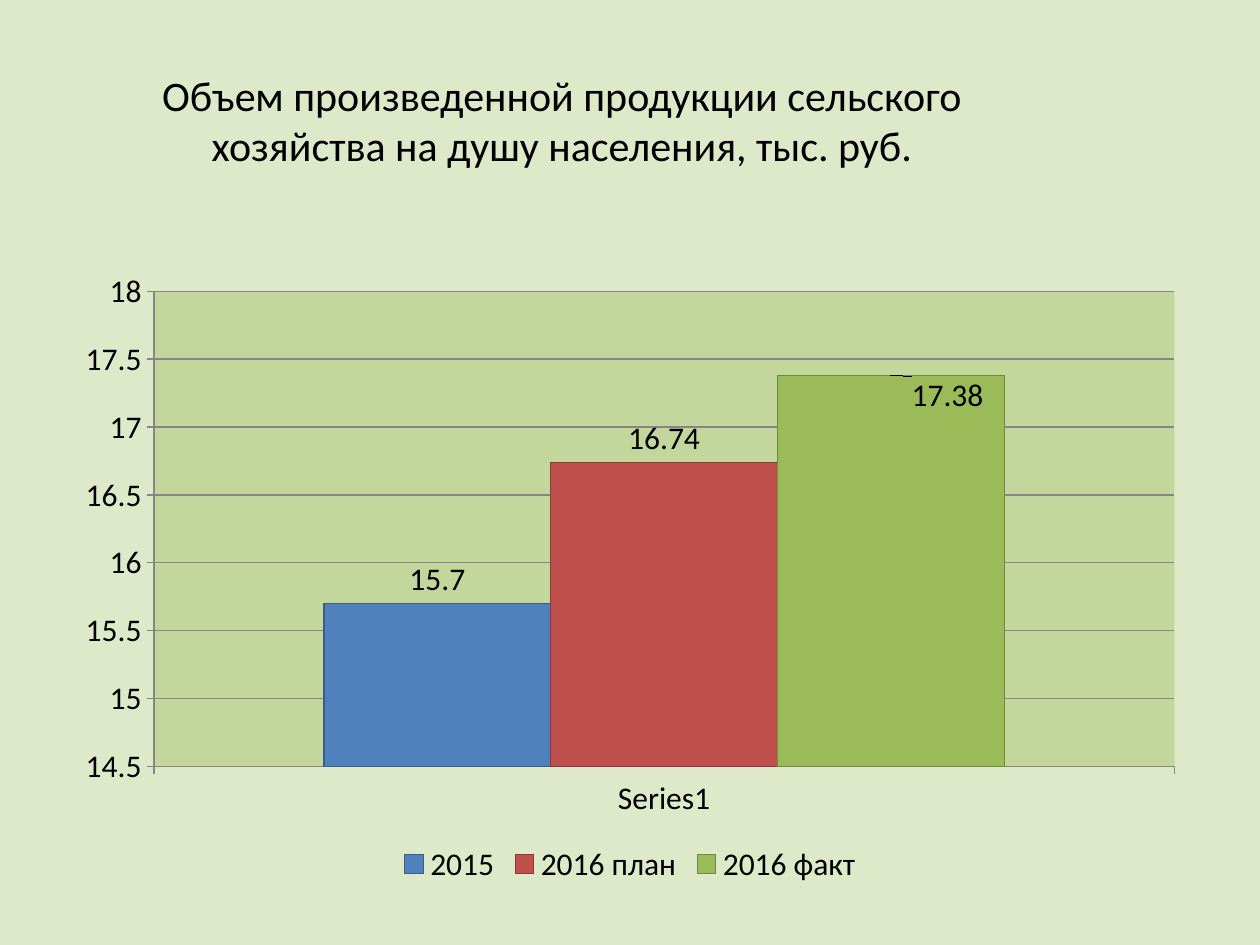
from lxml import etree
from pptx import Presentation
from pptx.chart.data import CategoryChartData as ChartData
from pptx.dml.color import RGBColor as RGB
from pptx.enum.chart import (XL_CHART_TYPE as Kind, XL_LABEL_POSITION as Spot,
                             XL_LEGEND_POSITION as Side, XL_TICK_MARK as Tick)
from pptx.enum.text import MSO_ANCHOR as Anchor, PP_ALIGN as Align
from pptx.oxml import parse_xml
from pptx.oxml.ns import nsdecls, qn
from pptx.util import Inches, Pt

# Content
TITLE = "Объем произведенной продукции сельского хозяйства на душу населения, тыс. руб."
GROUP = "Series1"
BLACK = RGB(0, 0, 0)
GREY = RGB(0x86, 0x86, 0x86)
PAGE = RGB(0xDE, 0xE9, 0xC9)
PLOT = RGB(0xC3, 0xD6, 0x9B)
BARS = [  # name, value, fill, edge
    ("2015", 15.7, RGB(0x4F, 0x81, 0xBD), RGB(0x38, 0x5D, 0x8A)),
    ("2016 план", 16.74, RGB(0xC0, 0x50, 0x4D), RGB(0x8C, 0x38, 0x36)),
    ("2016 факт", 17.38, RGB(0x9B, 0xBB, 0x59), RGB(0x71, 0x89, 0x3F)),
]
SCALE = {"minimum_scale": 14.5, "maximum_scale": 18, "major_unit": 0.5}
FONT = {"name": "Calibri", "size": Pt(18), "bold": False}
SHIFT = {"x": 0.05, "y": 0.07}  # last label, share of the chart
WIDE, HIGH = 10, 7.5


def style(thing, form):
    for key, val in form.items():
        setattr(thing, key, val)


def area(*box):
    return [Inches(n) for n in box]


# Slide
deck = Presentation()
style(deck, {"slide_width": Inches(WIDE), "slide_height": Inches(HIGH)})
slide = deck.slides.add_slide(deck.slide_layouts[6])
slide.background.fill.solid()
slide.background.fill.fore_color.rgb = PAGE

# Title
frame = slide.shapes.add_textbox(*area(0.5, 0.35, 7.92, 1.2)).text_frame
style(frame, {"word_wrap": True, "vertical_anchor": Anchor.MIDDLE, "text": TITLE})
para = frame.paragraphs[0]
para.alignment = Align.CENTER
style(para.runs[0].font, FONT | {"size": Pt(24)})
para.runs[0].font.color.rgb = BLACK

# Chart
data = ChartData()
data.categories = [GROUP]
for name, val, *_ in BARS:
    data.add_series(name, [val])
chart = slide.shapes.add_chart(
    Kind.COLUMN_CLUSTERED, *area(0.5, 2.06, WIDE - 1, 5), data).chart
style(chart, {"has_title": False, "has_legend": True})
style(chart.font, FONT)
chart.font.color.rgb = BLACK
style(chart.legend, {"position": Side.BOTTOM, "include_in_layout": False})

# Axes
axis = chart.value_axis
style(axis, SCALE | {"has_major_gridlines": True})
chart.category_axis.major_tick_mark = axis.major_tick_mark = Tick.OUTSIDE
for part in (axis, chart.category_axis, axis.major_gridlines):
    part.format.line.color.rgb = GREY
    part.format.line.width = Pt(0.75)

# Bars and their labels
plot = chart.plots[0]
style(plot, {"gap_width": 150, "overlap": 0, "vary_by_categories": False})
for bar, (_, _, fill, edge) in zip(plot.series, BARS):
    bar.format.fill.solid()
    bar.format.fill.fore_color.rgb = fill
    bar.format.line.color.rgb = edge
    bar.format.line.width = Pt(0.75)
    style(bar.data_labels, {"show_value": True, "position": Spot.OUTSIDE_END})

# Last label moved into its bar
last = plot.series[len(BARS) - 1]
last.points[0].data_label.position = Spot.OUTSIDE_END
moves = "".join(f'<c:{k} val="{v}"/>' for k, v in SHIFT.items())
label = last.data_labels._element.find(qn("c:dLbl"))
label.find(qn("c:idx")).addnext(parse_xml(
    f'<c:layout {nsdecls("c")}><c:manualLayout>{moves}</c:manualLayout></c:layout>'))

# Plot background, placed after the axes
ground = etree.SubElement(chart._chartSpace.chart.plotArea, qn("c:spPr"))
solid = etree.SubElement(ground, qn("a:solidFill"))
etree.SubElement(solid, qn("a:srgbClr"), val=str(PLOT))

deck.save("out.pptx")
